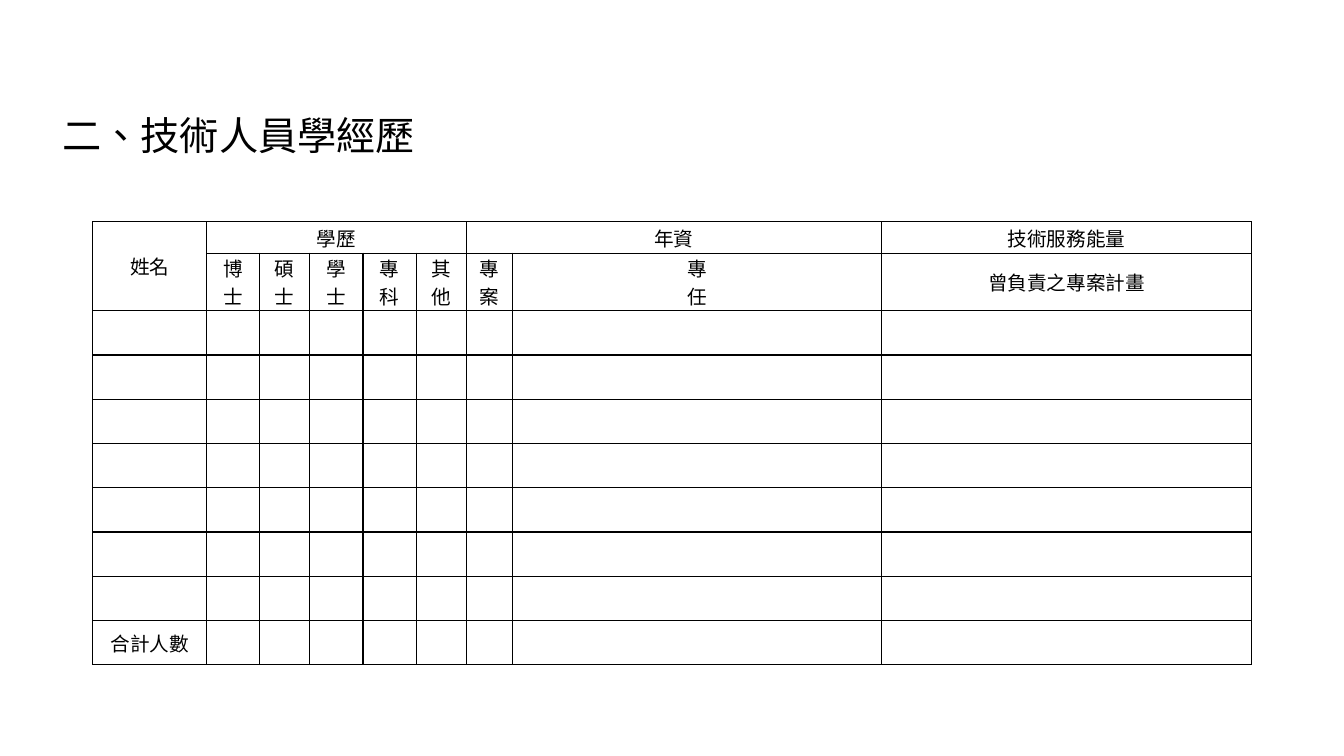
from lxml.etree import SubElement
from pptx import Presentation
from pptx.dml.color import RGBColor
from pptx.enum.text import MSO_ANCHOR, MSO_AUTO_SIZE, PP_ALIGN
from pptx.oxml.ns import qn
from pptx.util import Cm, Pt

BLACK = RGBColor(0x00, 0x00, 0x00)
WHITE = RGBColor(0xFF, 0xFF, 0xFF)
FONT = "Noto Sans CJK SC"

COLUMN_WIDTHS = [2.87, 1.32, 1.27, 1.35, 1.34, 1.26, 1.17, 9.3, 9.32]
ROW_HEIGHTS = [0.79, 1.45] + [1.115] * 8
TOTAL_ROW = len(ROW_HEIGHTS) - 1
MERGES = [((0, 0), (1, 0)), ((0, 1), (0, 5)), ((0, 6), (0, 7))]
GROUP_LABELS = {0: "姓名", 1: "學歷", 6: "年資", 8: "技術服務能量"}
COLUMN_LABELS = ["博\n士", "碩\n士", "學\n士", "專\n科", "其\n他",
                 "專\n案", "專\n任", "曾負責之專案計畫"]


def format_text(frame, size, alignment):
    for para in frame.paragraphs:
        para.alignment = alignment
        for span in para.runs:
            span.font.size = Pt(size)
            span.font.color.rgb = BLACK
            span.font.name = FONT
            properties = span.font._element
            properties.set("lang", "zh-TW")
            SubElement(properties, qn("a:ea"), typeface=FONT)


def add_title(slide, text):
    title = slide.shapes.title
    title.left, title.top = Cm(1.32), Cm(2.67)
    title.width, title.height = Cm(9.5), Cm(1.45)
    frame = title.text_frame
    frame.text = text
    frame.word_wrap = False
    frame.auto_size = MSO_AUTO_SIZE.SHAPE_TO_FIT_TEXT
    format_text(frame, 28, PP_ALIGN.LEFT)


def style_cell(cell):
    """Give a cell black borders, a white fill and tight margins."""
    cell.vertical_anchor = MSO_ANCHOR.MIDDLE
    cell.margin_left = cell.margin_right = Cm(0.15)
    cell.margin_top = cell.margin_bottom = 0
    properties = cell._tc.get_or_add_tcPr()
    for side in ("L", "R", "T", "B"):
        line = SubElement(properties, qn(f"a:ln{side}"), w=str(Pt(1)))
        fill = SubElement(line, qn("a:solidFill"))
        SubElement(fill, qn("a:srgbClr"), val=str(BLACK))
    cell.fill.solid()
    cell.fill.fore_color.rgb = WHITE


def write_cell(cell, text):
    cell.text_frame.text = text
    format_text(cell.text_frame, 14, PP_ALIGN.CENTER)


def add_staff_table(slide):
    frame = slide.shapes.add_table(
        len(ROW_HEIGHTS), len(COLUMN_WIDTHS), Cm(2.34), Cm(5.59),
        Cm(sum(COLUMN_WIDTHS)), Cm(sum(ROW_HEIGHTS)))
    table = frame.table
    table.first_row = table.horz_banding = False
    for column, width in zip(table.columns, COLUMN_WIDTHS):
        column.width = Cm(width)
    for row, height in zip(table.rows, ROW_HEIGHTS):
        row.height = Cm(height)
    for cell in table.iter_cells():
        style_cell(cell)
    for first, last in MERGES:
        table.cell(*first).merge(table.cell(*last))

    for column, label in GROUP_LABELS.items():
        write_cell(table.cell(0, column), label)
    for column, label in enumerate(COLUMN_LABELS, start=1):
        write_cell(table.cell(1, column), label)
    write_cell(table.cell(TOTAL_ROW, 0), "合計人數")


def main():
    deck = Presentation()
    deck.slide_width, deck.slide_height = Cm(33.87), Cm(19.05)
    page = deck.slides.add_slide(deck.slide_layouts.get_by_name("Title Only"))
    add_title(page, "二、技術人員學經歷")
    add_staff_table(page)
    deck.save("out.pptx")


if __name__ == "__main__":
    main()
